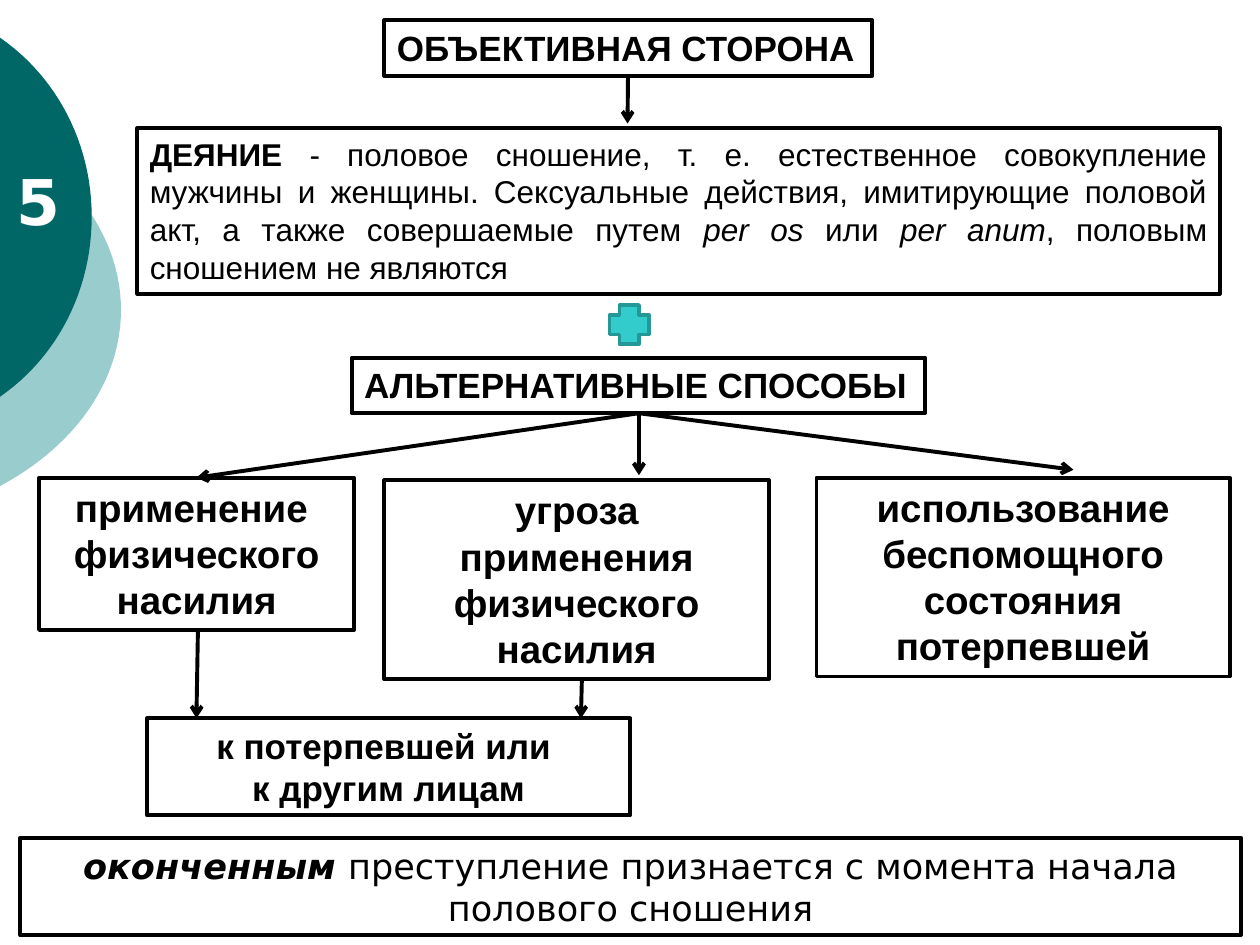
from lxml import etree
from pptx import Presentation
from pptx import util as u
from pptx.dml.color import RGBColor
from pptx.enum import shapes, text
from pptx.oxml.ns import qn

COLORS = {
    "ink": "000000",
    "white": "FFFFFF",
    "dark_disc": "006666",
    "light_disc": "99CCCC",
    "plus": "33CCCC",
    "plus_edge": "269797",
}
LEFT, CENTER, JUSTIFY = text.PP_ALIGN.LEFT, text.PP_ALIGN.CENTER, text.PP_ALIGN.JUSTIFY
SANS = "DejaVu Sans"


def rgb(name):
    return RGBColor.from_string(COLORS[name])


def bezier(start, control_1, control_2, end, steps=24):
    """Points along a cubic curve, without its start."""
    for step in range(1, steps + 1):
        t = step / steps
        weights = ((1 - t) ** 3, 3 * t * (1 - t) ** 2, 3 * t ** 2 * (1 - t), t ** 3)
        corners = (start, control_1, control_2, end)
        yield tuple(u.Cm(sum(w * c[axis] for w, c in zip(weights, corners)))
                    for axis in (0, 1))


def add_disc(slide, color, top, upper, tip, lower, bottom):
    """Part of a disc cut off by the left slide edge."""
    start, end = (0, top), (0, bottom)
    builder = slide.shapes.build_freeform(0, u.Cm(top))
    outline = [*bezier(start, upper, (tip[0], upper[1] + (tip[1] - upper[1]) * 0.48), tip),
               *bezier(tip, (tip[0], lower[1] - (lower[1] - tip[1]) * 0.48), lower, end)]
    builder.add_line_segments(outline, close=True)
    disc = builder.convert_to_shape()
    disc.shadow.inherit = False
    disc.fill.solid()
    disc.fill.fore_color.rgb = rgb(color)
    disc.line.fill.background()


def add_text(slide, place, paragraphs, size, align=CENTER, font="Arial",
             color="ink", wrap=True, border=True):
    """Paragraphs are lists of (words, style); style holds b and i."""
    box = slide.shapes.add_textbox(*map(u.Cm, place))
    if border:
        box.line.color.rgb = rgb("ink")
        box.line.width = u.Pt(2.25)
    frame = box.text_frame
    frame.word_wrap = wrap
    frame.auto_size = text.MSO_AUTO_SIZE.SHAPE_TO_FIT_TEXT
    for index, parts in enumerate(paragraphs):
        paragraph = frame.add_paragraph() if index else frame.paragraphs[0]
        paragraph.alignment = align
        for words, style in parts:
            run = paragraph.add_run()
            run.text = words
            run.font.name = font
            run.font.size = u.Pt(size)
            run.font.bold = "b" in style
            run.font.italic = "i" in style
            run.font.color.rgb = rgb(color)


def add_arrow(slide, *ends):
    arrow = slide.shapes.add_connector(shapes.MSO_CONNECTOR.STRAIGHT, *map(u.Cm, ends))
    arrow.line.color.rgb = rgb("ink")
    arrow.line.width = u.Pt(2.25)
    properties = arrow.line._get_or_add_ln()
    etree.SubElement(properties, qn("a:tailEnd"), type="arrow")
    etree.SubElement(arrow._element.spPr, qn("a:effectLst"))


def add_plus(slide, left, top, side):
    plus = slide.shapes.add_shape(shapes.MSO_SHAPE.CROSS, *map(u.Cm, (left, top, side, side)))
    plus.shadow.inherit = False
    plus.fill.solid()
    plus.fill.fore_color.rgb = rgb("plus")
    plus.line.color.rgb = rgb("plus_edge")
    plus.line.width = u.Pt(2)


def main():
    deck = Presentation()
    deck.slide_width, deck.slide_height = u.Cm(25.4), u.Cm(19.05)
    slide = deck.slides.add_slide(deck.slide_layouts[6])

    add_disc(slide, "light_disc", 2.69, (1.52, 3.51), (2.44, 6.25), (1.52, 8.99), 9.8)
    add_disc(slide, "dark_disc", 0.76, (1.17, 1.57), (1.85, 4.37), (1.17, 7.19), 8)
    add_text(slide, (0.08, 3.15, 1.42, 1.78), [[("5", "b")]], 36, LEFT, SANS,
             "white", border=False)

    headings = [((7.75, 0.41, 9.83, 1.12), "ОБЪЕКТИВНАЯ СТОРОНА"),
                ((7.09, 7.21, 11.56, 1.12), "АЛЬТЕРНАТИВНЫЕ СПОСОБЫ")]
    for place, heading in headings:
        add_text(slide, place, [[(heading, "b")]], 20, LEFT, wrap=False)

    act = [("ДЕЯНИЕ", "b"),
           (" - половое сношение, т. е. естественное совокупление мужчины и женщины. "
            "Сексуальные действия, имитирующие половой акт, а также совершаемые путем ", ""),
           ("per os ", "i"), ("или ", ""), ("per anum", "i"),
           (", половым сношением не являются", "")]
    add_text(slide, (2.77, 2.59, 21.82, 3.33), [act], 18, JUSTIFY)
    add_plus(slide, 12.29, 6.15, 0.79)

    methods = [
        ((0.79, 9.63, 6.35, 3.07), 22, ["применение ", "физического", "насилия"]),
        ((7.75, 9.68, 7.75, 4.01), 22, ["угроза применения физического насилия"]),
        ((16.46, 9.63, 8.33, 4.01), 22, ["использование беспомощного состояния потерпевшей"]),
        ((2.97, 14.48, 9.73, 1.96), 20, ["к потерпевшей или ", "к другим лицам"]),
    ]
    for place, size, lines in methods:
        add_text(slide, place, [[(line, "b")] for line in lines], size)

    add_arrow(slide, 12.66, 1.5, 12.65, 2.49)
    for tip in ((3.96, 9.63), (12.88, 9.58), (21.64, 9.47)):
        add_arrow(slide, 12.88, 8.33, *tip)
    add_arrow(slide, 3.99, 12.7, 3.96, 14.48)
    add_arrow(slide, 11.73, 13.69, 11.71, 14.48)

    completion = [("оконченным ", "bi"),
                  ("преступление признается с момента начала полового сношения", "")]
    add_text(slide, (0.41, 16.89, 24.61, 1.96), [completion], 20, font=SANS)

    deck.save("out.pptx")


if __name__ == "__main__":
    main()
